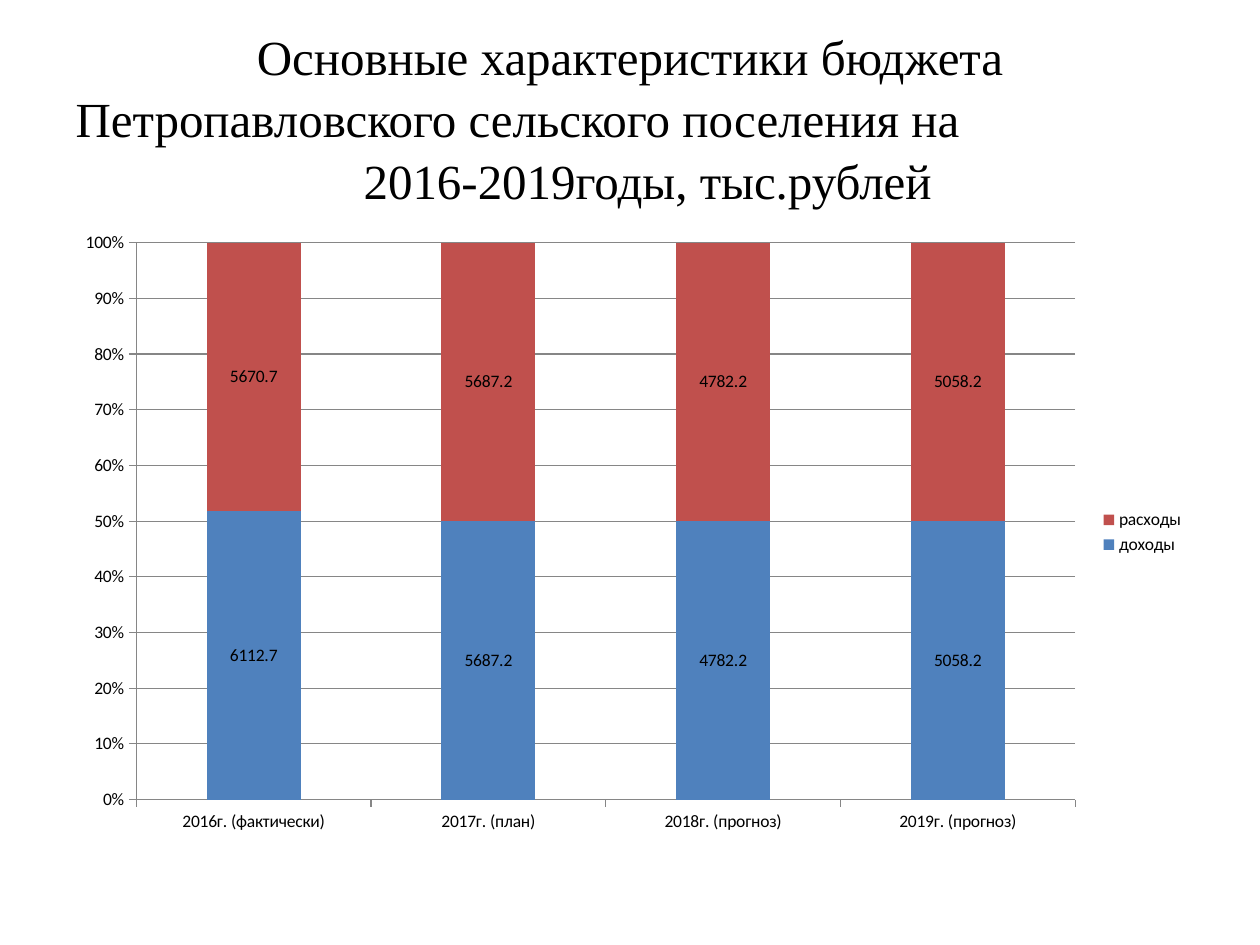
"""Build a slide with a 100% stacked column chart of the village budget."""
from dataclasses import dataclass

from pptx import Presentation
from pptx import util as u
from pptx.chart.data import CategoryChartData
from pptx.dml.color import RGBColor
from pptx.enum import chart as ch, text


@dataclass(frozen=True)
class Theme:
    title_font: str = "Times New Roman"
    chart_font: str = "Calibri"
    title_size: int = 28
    chart_size: int = 10
    ink: str = "000000"
    line: str = "868686"


@dataclass(frozen=True)
class Box:
    left: float
    top: float
    width: float
    height: float


@dataclass(frozen=True)
class TitleLine:
    words: str
    align: text.PP_ALIGN
    indent: float = 0


@dataclass(frozen=True)
class Series:
    name: str
    values: tuple[float, ...]
    color: str


THEME = Theme()
WIDTH, HEIGHT = u.Inches(10), u.Inches(7.5)
TITLE_BOX = Box(0.05, 0.04, 0.9, 1 / 6)
CHART_BOX = Box(0.05, 7 / 30, 0.9, 0.66)
TITLE = (
    TitleLine("Основные характеристики бюджета", text.PP_ALIGN.CENTER),
    TitleLine("Петропавловского сельского поселения на", text.PP_ALIGN.LEFT),
    TitleLine("2016-2019годы, тыс.рублей", text.PP_ALIGN.CENTER, 0.28),
)
YEARS = ("2016г. (фактически)", "2017г. (план)", "2018г. (прогноз)", "2019г. (прогноз)")
BUDGET = (
    Series("доходы", (6112.7, 5687.2, 4782.2, 5058.2), "4F81BD"),
    Series("расходы", (5670.7, 5687.2, 4782.2, 5058.2), "C0504D"),
)


def place(box: Box) -> tuple[int, int, int, int]:
    """Turn shares of the slide into lengths."""
    return (int(box.left * WIDTH), int(box.top * HEIGHT),
            int(box.width * WIDTH), int(box.height * HEIGHT))


def style_font(font, name: str, size: int) -> None:
    """Apply a theme typeface and size in the ink colour."""
    font.name, font.size, font.bold = name, u.Pt(size), False
    font.color.rgb = RGBColor.from_string(THEME.ink)


def style_line(line) -> None:
    """Give an axis or grid line the theme stroke."""
    line.color.rgb = RGBColor.from_string(THEME.line)
    line.width = u.Pt(0.75)


def fill_title(sp, lines: tuple[TitleLine, ...]) -> None:
    """Place the title and write its lines as paragraphs."""
    sp.left, sp.top, sp.width, sp.height = place(TITLE_BOX)
    tf = sp.text_frame
    tf.word_wrap, tf.auto_size = True, text.MSO_AUTO_SIZE.NONE
    tf.vertical_anchor = text.MSO_ANCHOR.MIDDLE
    for i, line in enumerate(lines):
        p = tf.add_paragraph() if i else tf.paragraphs[0]
        p.alignment, p.line_spacing = line.align, 1.05
        p.space_before = p.space_after = u.Pt(0)
        p._p.get_or_add_pPr().set("marL", str(u.Inches(line.indent)))
        r = p.add_run()
        r.text = line.words
        style_font(r.font, THEME.title_font, THEME.title_size)


def add_budget_chart(s, series: tuple[Series, ...]) -> None:
    """Add the stacked chart with axes, labels and legend."""
    data = CategoryChartData()
    data.categories = YEARS
    for item in series:
        data.add_series(item.name, item.values)
    chart = s.shapes.add_chart(
        ch.XL_CHART_TYPE.COLUMN_STACKED_100, *place(CHART_BOX), data).chart
    style_font(chart.font, THEME.chart_font, THEME.chart_size)
    chart.has_title = False
    chart.has_legend = True
    chart.legend.position = ch.XL_LEGEND_POSITION.RIGHT
    chart.legend.include_in_layout = False

    for axis in (chart.category_axis, chart.value_axis):
        axis.major_tick_mark = ch.XL_TICK_MARK.OUTSIDE
        axis.minor_tick_mark = ch.XL_TICK_MARK.NONE
        style_line(axis.format.line)
    value_axis = chart.value_axis
    value_axis.has_major_gridlines = True
    style_line(value_axis.major_gridlines.format.line)
    value_axis.tick_labels.number_format = "0%"
    value_axis.tick_labels.number_format_is_linked = False

    plot = chart.plots[0]
    plot.gap_width, plot.overlap, plot.vary_by_categories = 150, 100, False
    for drawn, item in zip(plot.series, series):
        drawn.format.fill.solid()
        drawn.format.fill.fore_color.rgb = RGBColor.from_string(item.color)
        drawn.data_labels.show_value = True
        style_font(drawn.data_labels.font, THEME.chart_font, THEME.chart_size)


def main() -> None:
    """Build and save the slide."""
    prs = Presentation()
    prs.slide_width, prs.slide_height = WIDTH, HEIGHT
    s = prs.slides.add_slide(prs.slide_layouts[5])
    fill_title(s.shapes.title, TITLE)
    add_budget_chart(s, BUDGET)
    prs.save("out.pptx")


if __name__ == "__main__":
    main()
